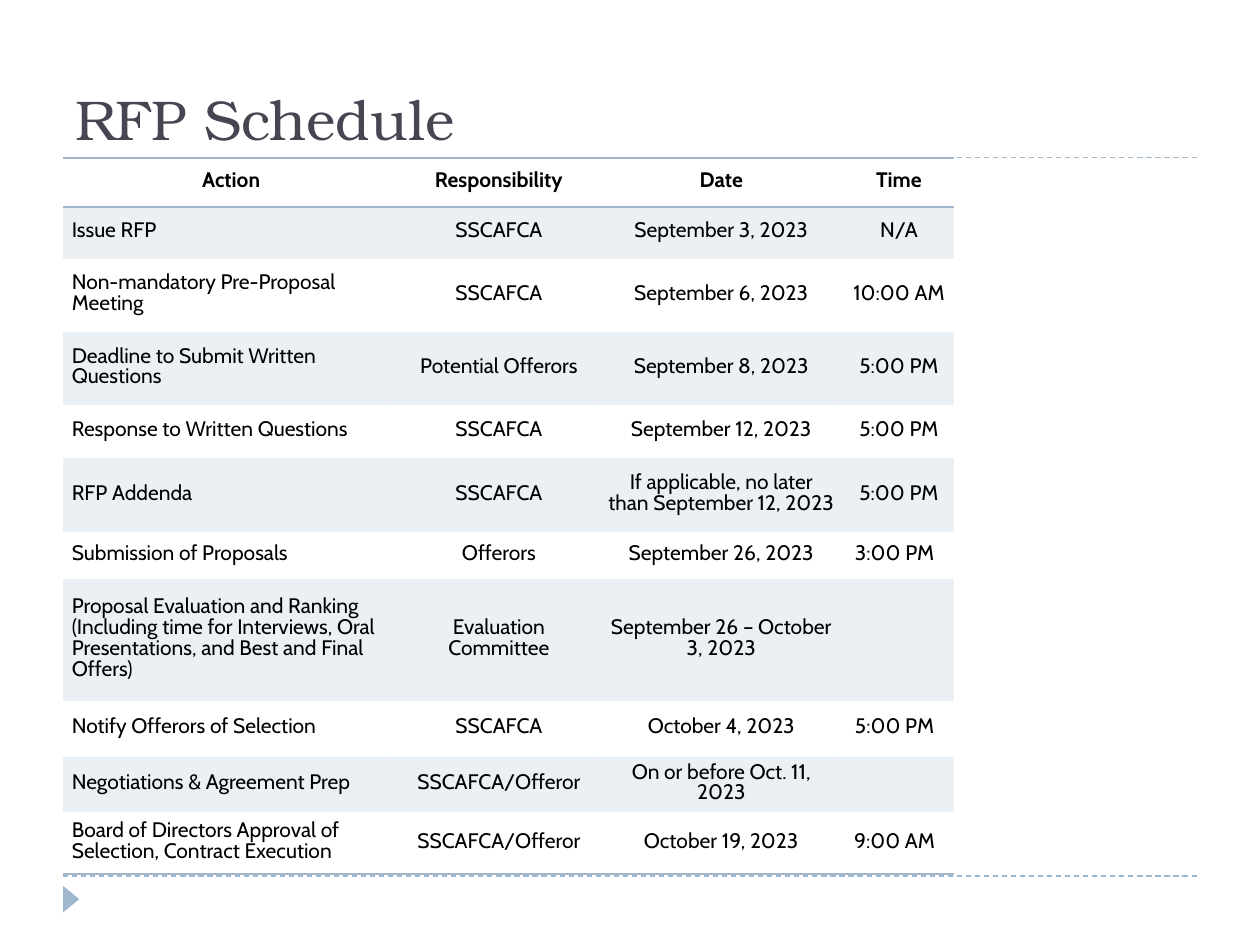
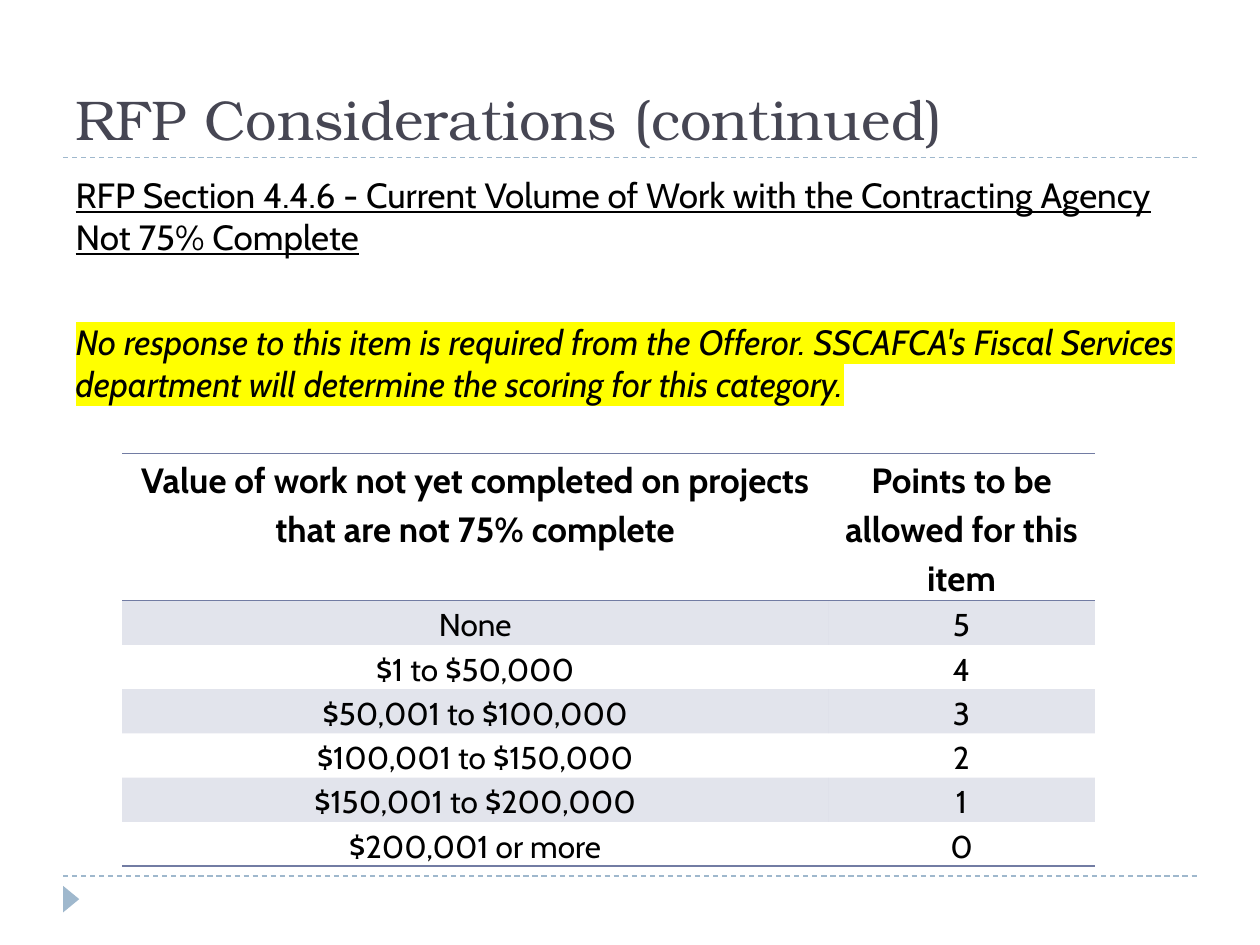
from dataclasses import dataclass

from lxml import etree
from pptx import Presentation
from pptx import util as u
from pptx.dml.color import RGBColor
from pptx.enum import dml, shapes, text
from pptx.oxml.ns import qn

WIDTH, HEIGHT = u.Inches(10), u.Inches(7.5)
PLAIN_TABLE = "{2D5ABB26-0587-4C30-8999-92F81FD0307C}"


@dataclass(frozen=True)
class Theme:
    ink: str = "000000"
    title: str = "464653"
    sky: str = "9FB8CD"
    slate: str = "727CA3"
    marker: str = "FFFF00"
    title_font: str = "TeX Gyre Bonum"
    body_font: str = "Cabin"
    title_size: int = 32
    body_size: int = 20
    points_size: int = 18
    schedule_size: int = 12
    band_opacity: int = 20


THEME = Theme()

# Row height weight, line pitch in points, cells
SCHEDULE = [
    (0.39, 11.5, ["Action", "Responsibility", "Date", "Time"]),
    (0.41, 11.6, ["Issue RFP", "SSCAFCA", "September 3, 2023", "N/A"]),
    (0.58, 11.5, ["Non-mandatory Pre-Proposal Meeting", "SSCAFCA",
                  "September 6, 2023", "10:00 AM"]),
    (0.58, 11.5, ["Deadline to Submit Written Questions", "Potential Offerors",
                  "September 8, 2023", "5:00 PM"]),
    (0.42, 12, ["Response to Written Questions", "SSCAFCA",
                "September 12, 2023", "5:00 PM"]),
    (0.59, 12, ["RFP Addenda", "SSCAFCA",
                "If applicable, no later than September 12, 2023", "5:00 PM"]),
    (0.37, 12, ["Submission of Proposals", "Offerors",
                "September 26, 2023", "3:00 PM"]),
    (0.97, 12, ["Proposal Evaluation and Ranking (Including time for Interviews, "
                "Oral Presentations, and Best and Final Offers)",
                "Evaluation\nCommittee", "September 26 – October 3, 2023", ""]),
    (0.44, 11.9, ["Notify Offerors of Selection", "SSCAFCA",
                  "October 4, 2023", "5:00 PM"]),
    (0.44, 11.9, ["Negotiations & Agreement Prep", "SSCAFCA/Offeror",
                  "On or before Oct. 11, 2023", ""]),
    (0.49, 11.9, ["Board of Directors Approval of Selection, Contract Execution",
                  "SSCAFCA/Offeror", "October 19, 2023", "9:00 AM"]),
]
SUBMISSION_ROW, TIME_COLUMN = 6, 3

POINTS = [
    ["Value of work not yet completed on projects that are not 75% complete",
     "Points to be allowed for this item"],
    ["None", "5"],
    ["$1 to $50,000", "4"],
    ["$50,001 to $100,000", "3"],
    ["$100,001 to $150,000", "2"],
    ["$150,001 to $200,000", "1"],
    ["$200,001 or more", "0"],
]


def across(share):
    return round(WIDTH * share)


def down(share):
    return round(HEIGHT * share)


def box(left, top, width, height):
    """Turn shares of the slide into left, top, width, height."""
    return across(left), down(top), across(width), down(height)


def place(shape, area):
    shape.left, shape.top, shape.width, shape.height = area


def split(total, weights):
    return [round(total * weight / sum(weights)) for weight in weights]


def style(paragraph, size, font=THEME.body_font, color=THEME.ink, **marks):
    for run in paragraph.runs:
        run.font.name, run.font.size = font, u.Pt(size)
        run.font.color.rgb = RGBColor.from_string(color)
        for mark, value in marks.items():
            setattr(run.font, mark, value)


def highlight(paragraph, color):
    for run in paragraph.runs:
        latin = run.font._element.find(qn("a:latin"))
        mark = etree.Element(qn("a:highlight"))
        etree.SubElement(mark, qn("a:srgbClr"), val=color)
        latin.addprevious(mark)


def draw_rule(slide, y):
    rule = slide.shapes.add_connector(
        shapes.MSO_CONNECTOR.STRAIGHT, across(0.05), down(y), across(0.95), down(y))
    rule.line.color.rgb = RGBColor.from_string(THEME.sky)
    rule.line.width = u.Pt(0.75)
    rule.line.dash_style = dml.MSO_LINE.DASH
    etree.SubElement(rule._element.spPr, qn("a:effectLst"))
    return rule


def draw_corner_arrow(slide):
    arrow = slide.shapes.add_shape(
        shapes.MSO_SHAPE.ISOSCELES_TRIANGLE, *box(0.046, 0.943, 0.021, 0.017))
    arrow.rotation = 90
    arrow.shadow.inherit = False
    arrow.fill.solid()
    arrow.fill.fore_color.rgb = RGBColor.from_string(THEME.sky)
    arrow.line.fill.background()
    return arrow


def set_up_master(master, slide):
    """Draw the shared frame on a slide, then move it to the master."""
    frame = [draw_rule(slide, 0.927), draw_rule(slide, 0.167),
             draw_corner_arrow(slide)]
    for part in frame:
        master.shapes.element.append(part._element)
    for holder in master.placeholders:
        if holder.placeholder_format.type == shapes.PP_PLACEHOLDER.TITLE:
            place(holder, box(0.05, 0.023, 0.9, 0.144))
            holder.text_frame.vertical_anchor = text.MSO_ANCHOR.BOTTOM


def add_titled_slide(deck, layout, title):
    slide = deck.slides.add_slide(deck.slide_layouts.get_by_name(layout))
    heading = slide.shapes.title.text_frame
    heading.text = title
    heading.auto_size = text.MSO_AUTO_SIZE.NONE
    heading.paragraphs[0].alignment = text.PP_ALIGN.LEFT
    style(heading.paragraphs[0], THEME.title_size, THEME.title_font, THEME.title)
    return slide


def add_border(cell, side, color):
    """Add a one-point edge; call before the cell is filled."""
    edge = etree.SubElement(cell._tc.get_or_add_tcPr(), qn(f"a:{side}"),
                            w=str(u.Pt(1)))
    fill = etree.SubElement(edge, qn("a:solidFill"))
    etree.SubElement(fill, qn("a:srgbClr"), val=color)


def fill_band(cell, color):
    cell.fill.solid()
    cell.fill.fore_color.rgb = RGBColor.from_string(color)
    tint = cell._tc.tcPr.find(qn("a:solidFill")).find(qn("a:srgbClr"))
    etree.SubElement(tint, qn("a:alpha"), val=str(THEME.band_opacity * 1000))


def write_cell(cell, words, size, bold, leading, align):
    cell.text = words
    for paragraph in cell.text_frame.paragraphs:
        paragraph.alignment = align
        paragraph.line_spacing = leading
        style(paragraph, size, bold=bold)


def add_banded_table(slide, area, widths, heights, color):
    """Add a table with ruled header and foot, and every other row tinted."""
    table = slide.shapes.add_table(len(heights), len(widths), *area).table
    table._tbl.tblPr.find(qn("a:tableStyleId")).text = PLAIN_TABLE
    for column, width in zip(table.columns, split(area[2], widths)):
        column.width = width
    for row, height in zip(table.rows, split(area[3], heights)):
        row.height = height
    last = len(heights) - 1
    for index, row in enumerate(table.rows):
        for cell in row.cells:
            cell.margin_left = u.Inches(0.07)
            cell.margin_right = cell.margin_top = cell.margin_bottom = 0
            if index == 0:
                add_border(cell, "lnT", color)
            if index in (0, last):
                add_border(cell, "lnB", color)
            if index % 2:
                fill_band(cell, color)
            else:
                cell.fill.background()
    return table


def fill_schedule(slide):
    heights = [height for height, _, _ in SCHEDULE]
    table = add_banded_table(slide, box(0.05, 0.167, 0.707, 0.758),
                             (2.6, 1.65, 1.88, 0.94), heights, THEME.sky)
    for r, (_, pitch, entries) in enumerate(SCHEDULE):
        for c, words in enumerate(entries):
            cell = table.cell(r, c)
            left = r > 0 and c == 0
            write_cell(cell, words, THEME.schedule_size, r == 0, u.Pt(pitch),
                       text.PP_ALIGN.LEFT if left else text.PP_ALIGN.CENTER)
            cell.vertical_anchor = text.MSO_ANCHOR.MIDDLE
            if c == TIME_COLUMN and r >= SUBMISSION_ROW:
                cell.margin_left = 0


def fill_points(slide):
    heights = [1.16] + [0.35] * (len(POINTS) - 1)
    table = add_banded_table(slide, box(0.097, 0.48, 0.772, 0.436),
                             (5.61, 2.12), heights, THEME.slate)
    for r, entries in enumerate(POINTS):
        size = THEME.points_size if r else THEME.body_size
        for c, words in enumerate(entries):
            cell = table.cell(r, c)
            write_cell(cell, words, size, r == 0, 1.15, text.PP_ALIGN.CENTER)
            cell.margin_right = cell.margin_left


def fill_considerations(slide):
    body = slide.placeholders[1]
    place(body, box(0.05, 0.177, 0.9, 0.741))
    frame = body.text_frame
    frame.text = (
        "RFP Section 4.4.6 - Current Volume of Work with the Contracting Agency "
        "Not 75% Complete\n"
        "No response to this item is required from the Offeror. SSCAFCA's Fiscal "
        "Services department will determine the scoring for this category.")
    frame.auto_size = text.MSO_AUTO_SIZE.NONE
    section, notice = frame.paragraphs
    for paragraph, gap in ((section, 6), (notice, 36)):
        paragraph.space_before = u.Pt(gap)
        properties = paragraph._p.get_or_add_pPr()
        properties.set("marL", "0")
        properties.set("indent", "0")
        etree.SubElement(properties, qn("a:buNone"))
    style(section, THEME.body_size, underline=True)
    style(notice, THEME.body_size, italic=True)
    highlight(notice, THEME.marker)


def main():
    deck = Presentation()
    deck.slide_width, deck.slide_height = WIDTH, HEIGHT

    schedule = add_titled_slide(deck, "Title Only", "RFP Schedule")
    set_up_master(deck.slide_master, schedule)
    fill_schedule(schedule)

    considerations = add_titled_slide(
        deck, "Title and Content", "RFP Considerations (continued)")
    fill_considerations(considerations)
    fill_points(considerations)

    deck.save("out.pptx")


if __name__ == "__main__":
    main()
